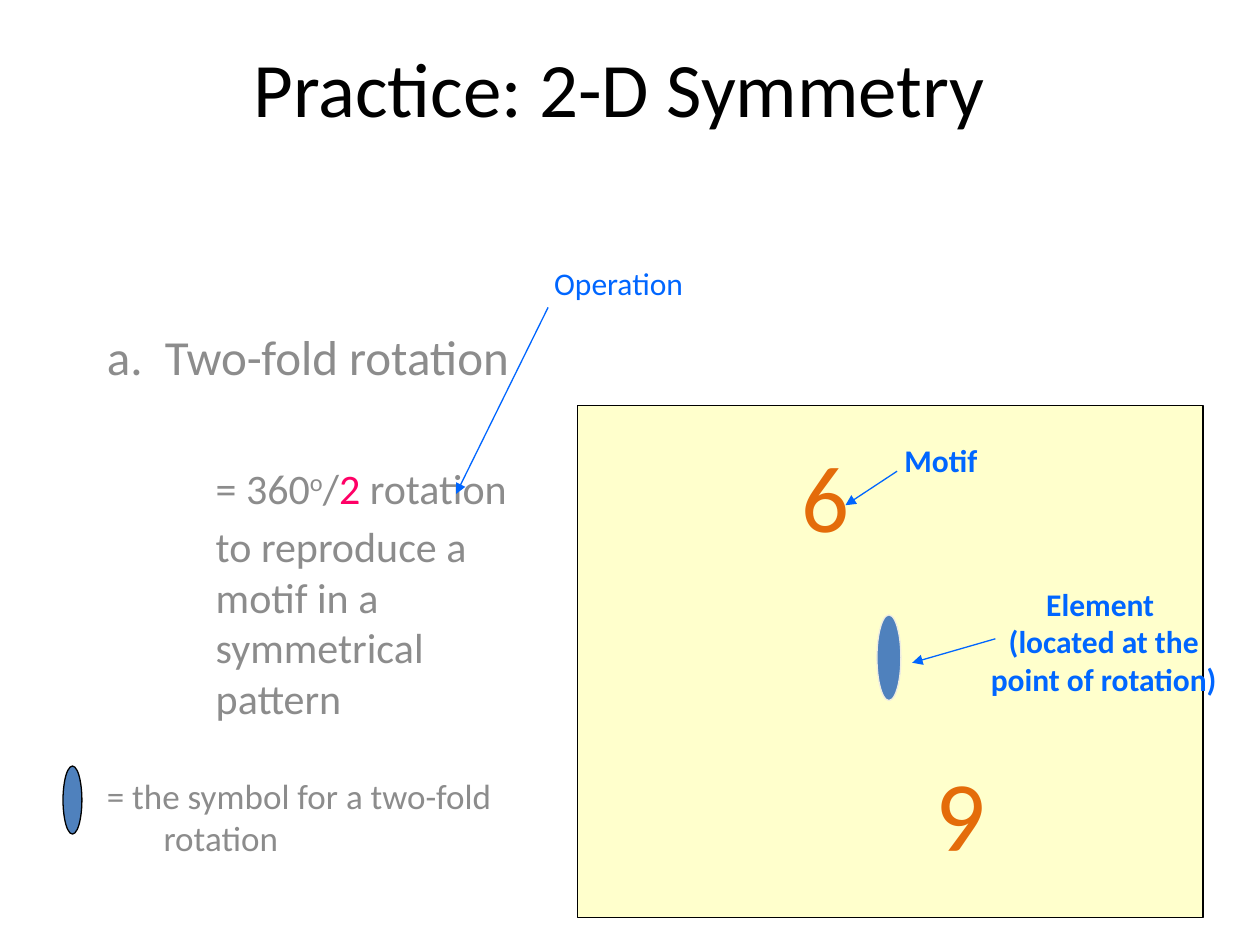
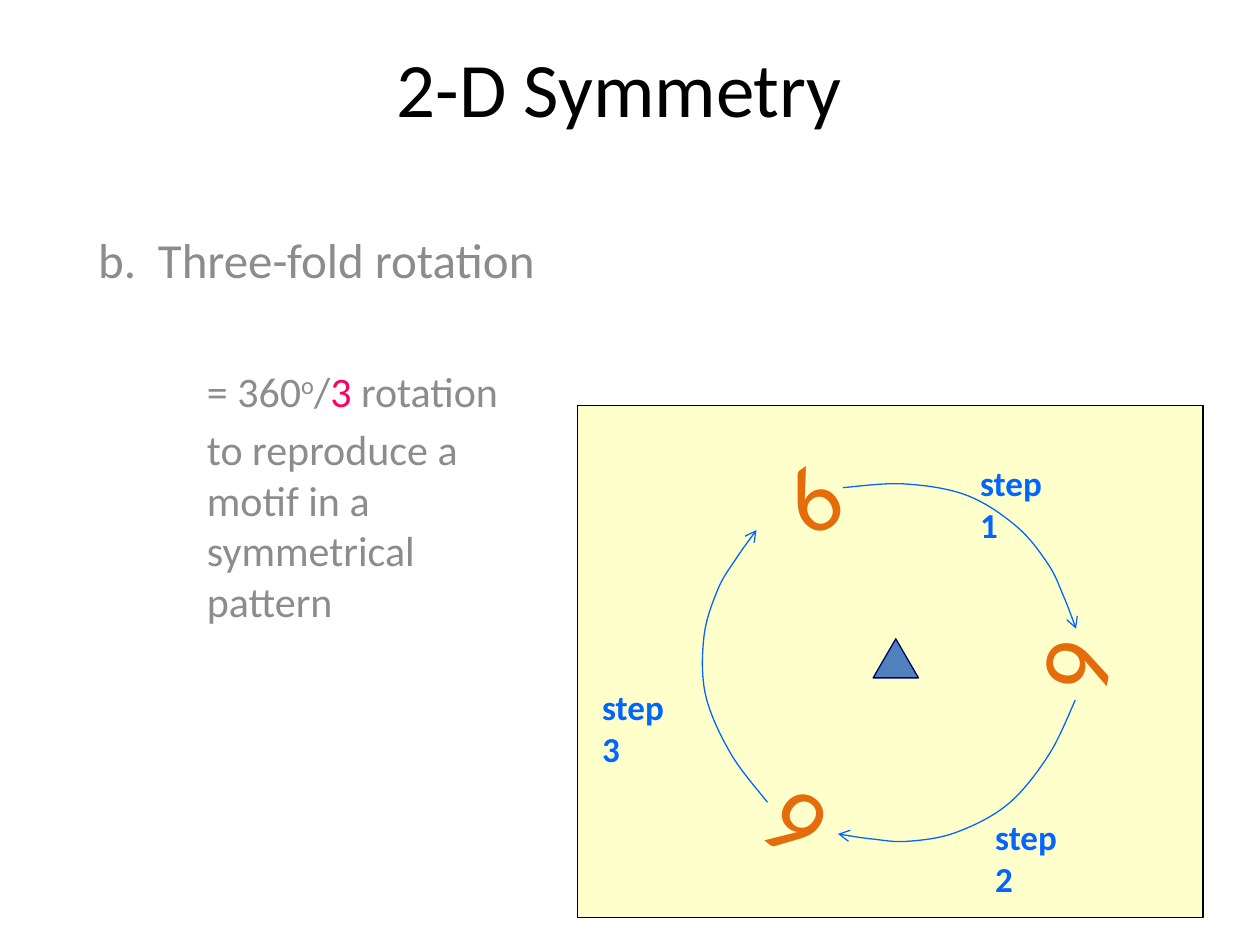
from lxml import etree
from pptx import Presentation
from pptx import util as u
from pptx.dml.color import RGBColor
from pptx.enum import shapes, text
from pptx.oxml.ns import qn

COLS, ROWS = 100, 75
WIDTH, HEIGHT = u.Inches(10), u.Inches(7.5)
FONT = "Calibri"
BLACK = RGBColor(0x00, 0x00, 0x00)
GREY = RGBColor(0x8C, 0x8C, 0x8C)
PINK = RGBColor(0xFF, 0x00, 0x66)
BLUE = RGBColor(0x00, 0x66, 0xFF)
NAVY = RGBColor(0x00, 0x00, 0x66)
STEEL = RGBColor(0x4F, 0x81, 0xBD)
CREAM = RGBColor(0xFF, 0xFF, 0xCC)
IVORY = RGBColor(0xEE, 0xEC, 0xE1)
ORANGE = RGBColor(0xE4, 0x6C, 0x0A)
SHAPE = shapes.MSO_SHAPE
CENTER = text.PP_ALIGN.CENTER
ARC_KNOTS = [(66.9, 38.8), (71.7, 38.5), (76.7, 39.4), (80.7, 41.9),
             (83.2, 44.9), (84.4, 47.4), (85.4, 50)]


def col(n):
    """Return the length of n grid columns."""
    return u.Emu(round(WIDTH * n / COLS))


def row(n):
    """Return the length of n grid rows."""
    return u.Emu(round(HEIGHT * n / ROWS))


def box(left, top, width, height):
    """Turn a place on the grid into slide lengths."""
    return col(left), row(top), col(width), row(height)


def add_run(p, words, size, color, bold=False, raised=False):
    """Add one formatted run to a paragraph."""
    r = p.add_run()
    r.text = words
    r.font.name, r.font.size, r.font.bold = FONT, u.Pt(size), bold
    r.font.color.rgb = color
    if raised:
        r.font._element.set("baseline", "30000")


def add_titled_slide(prs, title):
    """Add a title-only slide with the shared title style."""
    s = prs.slides.add_slide(prs.slide_layouts[5])
    sp = s.shapes.title
    sp.left, sp.top, sp.width, sp.height = box(6.67, 0, 85, 13.7)
    tf = sp.text_frame
    tf.vertical_anchor = text.MSO_ANCHOR.MIDDLE
    p = tf.paragraphs[0]
    p.alignment = CENTER
    add_run(p, title, 44, BLACK)
    return s


def add_shape(s, kind, place, fill, line):
    """Add a filled preset shape with a thin outline."""
    sp = s.shapes.add_shape(kind, *box(*place))
    sp.shadow.inherit = False
    sp.fill.solid()
    sp.fill.fore_color.rgb = fill
    sp.line.color.rgb = line
    sp.line.width = u.Pt(0.75)


def add_label(s, place, lines, size=18, color=BLUE, bold=True, align=None, wrap=True, turn=0):
    """Add a text box with one paragraph for each line."""
    sp = s.shapes.add_textbox(*box(*place))
    sp.rotation = turn
    tf = sp.text_frame
    tf.word_wrap = wrap
    for i, words in enumerate(lines):
        p = tf.add_paragraph() if i else tf.paragraphs[0]
        p.alignment = align
        add_run(p, words, size, color, bold)


def add_motif(s, left, top, turn=0):
    """Add the figure six, turned by an angle."""
    add_label(s, (left, top, 5.9, 10.1), ["6"], 54, ORANGE, False, wrap=False, turn=turn)


def style_arrow(sp, head):
    """Make a line thin and blue with an arrowhead at its end."""
    sp.line.color.rgb = BLUE
    sp.line.width = u.Pt(0.75)
    etree.SubElement(sp.line._get_or_add_ln(), qn("a:tailEnd"), type=head)


def add_arrow(s, x1, y1, x2, y2):
    """Add a straight arrow between two grid points."""
    cxn = s.shapes.add_connector(
        shapes.MSO_CONNECTOR.STRAIGHT, col(x1), row(y1), col(x2), row(y2))
    style_arrow(cxn, "triangle")
    etree.SubElement(cxn._element.spPr, qn("a:effectLst"))


def round_corners(sp):
    """Turn the straight segments of a freeform into smooth Bezier curves."""
    knots = [(int(pt.get("x")), int(pt.get("y"))) for pt in sp._element.iter(qn("a:pt"))]
    ends = [knots[0], *knots, knots[-1]]
    segments = list(sp._element.iter(qn("a:lnTo")))
    for segment, a, b, c, d in zip(segments, ends, ends[1:], ends[2:], ends[3:]):
        leave = [q + (r - p) / 6 for p, q, r in zip(a, b, c)]
        arrive = [q - (r - p) / 6 for p, q, r in zip(b, c, d)]
        curve = etree.Element(qn("a:cubicBezTo"))
        for x, y in (leave, arrive, c):
            etree.SubElement(curve, qn("a:pt"), x=str(round(x)), y=str(round(y)))
        segment.getparent().replace(segment, curve)


def add_curved_arrow(s, left, top, turn):
    """Add the arc between two motifs, placed and turned."""
    start, *rest = [(col(x), row(y)) for x, y in ARC_KNOTS]
    builder = s.shapes.build_freeform(*start)
    builder.add_line_segments(rest, close=False)
    sp = builder.convert_to_shape()
    round_corners(sp)
    sp.left, sp.top, sp.rotation = col(left), row(top), turn
    sp.shadow.inherit = False
    sp.fill.background()
    style_arrow(sp, "arrow")


def add_body_paragraph(p, left, first, before, size, runs):
    """Fill an indented body paragraph from (words, color, raised) runs."""
    pPr = p._p.get_or_add_pPr()
    pPr.set("marL", str(col(left)))
    pPr.set("indent", str(col(first)))
    p.space_before = u.Pt(before)
    for words, color, raised in runs:
        add_run(p, words, size, color, raised=raised)


def add_rotation_text(s, place, heading, heading_indent, fold, symbol_note=None):
    """Add the explanation of an n-fold rotation."""
    tf = s.shapes.add_textbox(*box(*place)).text_frame
    tf.word_wrap = True
    formula = [("= 360", GREY, False), ("o", GREY, True), ("/", GREY, False),
               (fold, PINK, False), (" rotation", GREY, False)]
    purpose = "to reproduce a motif in a symmetrical pattern"
    paragraphs = [(5 + heading_indent, -heading_indent, 0, 28, [(heading, GREY, False)]),
                  (13.64, 0, 44, 24, formula),
                  (13.64, 0, 4.8, 24, [(purpose, GREY, False)])]
    if symbol_note:
        paragraphs.append((9.5, -4.5, 29.6, 20, [(symbol_note, GREY, False)]))
    for i, paragraph in enumerate(paragraphs):
        add_body_paragraph(tf.add_paragraph() if i else tf.paragraphs[0], *paragraph)


def add_panel(s):
    """Add the pale panel that holds the drawing."""
    add_shape(s, SHAPE.RECTANGLE, (45.83, 32.2, 49.65, 40.6), CREAM, BLACK)


def build_two_fold(prs):
    """Build the slide on two-fold rotation."""
    s = add_titled_slide(prs, "Practice: 2-D Symmetry")
    add_rotation_text(s, (2.5, 25.4, 39.7, 44.9), "a.\tTwo-fold rotation", 4.6, "2",
                      "= the symbol for a two-fold rotation")
    add_panel(s)
    add_shape(s, SHAPE.OVAL, (69.6, 48.8, 1.9, 6.8), STEEL, IVORY)
    add_shape(s, SHAPE.OVAL, (5, 60.8, 1.5, 5.4), STEEL, BLACK)
    add_label(s, (70.8, 34.5, 10, 5), ["Motif"])
    add_label(s, (77.5, 45.9, 20.2, 10.1),
              ["Element ", "(located at the point of rotation)"], align=CENTER)
    add_label(s, (43, 20.5, 15.3, 5), ["Operation"], bold=False)
    add_motif(s, 62.6, 34.3)
    add_motif(s, 73.4, 60.4, 180)
    add_arrow(s, 71.2, 37.4, 67.1, 40.1)
    add_arrow(s, 43.5, 24.4, 36.2, 39.2)
    add_arrow(s, 79, 50.7, 72.4, 52.6)


def build_three_fold(prs):
    """Build the slide on three-fold rotation."""
    s = add_titled_slide(prs, "2-D Symmetry")
    add_rotation_text(s, (1.8, 17.7, 42.2, 44.9), "b.\tThree-fold rotation", 4.75, "3")
    add_panel(s)
    add_shape(s, SHAPE.ISOSCELES_TRIANGLE, (69.3, 50.7, 3.6, 3.1), STEEL, NAVY)
    for motif in ((61.4, 34.3, 325.5), (83.1, 48, 103.1), (59.9, 60.7, 219.4)):
        add_motif(s, *motif)
    steps = [((76.8, 36.1), (66.9, 38.4, 0)),
             ((78, 64.2), (66.8, 55.2, 119.4)),
             ((46.8, 53.9), (51.1, 47.2, 236.5))]
    for number, (corner, arc) in enumerate(steps, 1):
        add_curved_arrow(s, *arc)
        add_label(s, (*corner, 8.5, 4.3), [f"step {number}"], 20)


def main():
    """Build and save the presentation."""
    prs = Presentation()
    prs.slide_width, prs.slide_height = WIDTH, HEIGHT
    build_two_fold(prs)
    build_three_fold(prs)
    prs.save("out.pptx")


if __name__ == "__main__":
    main()
